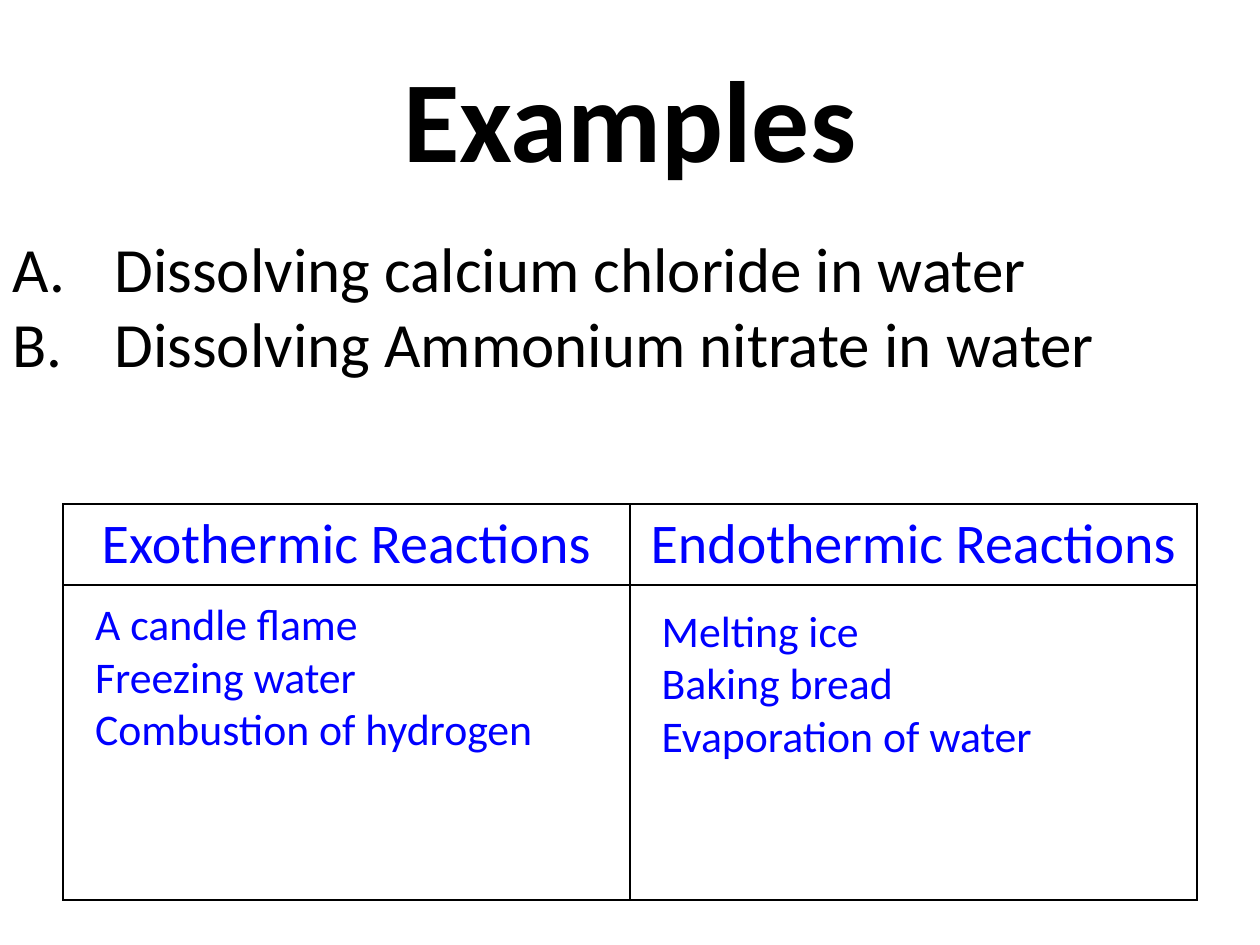
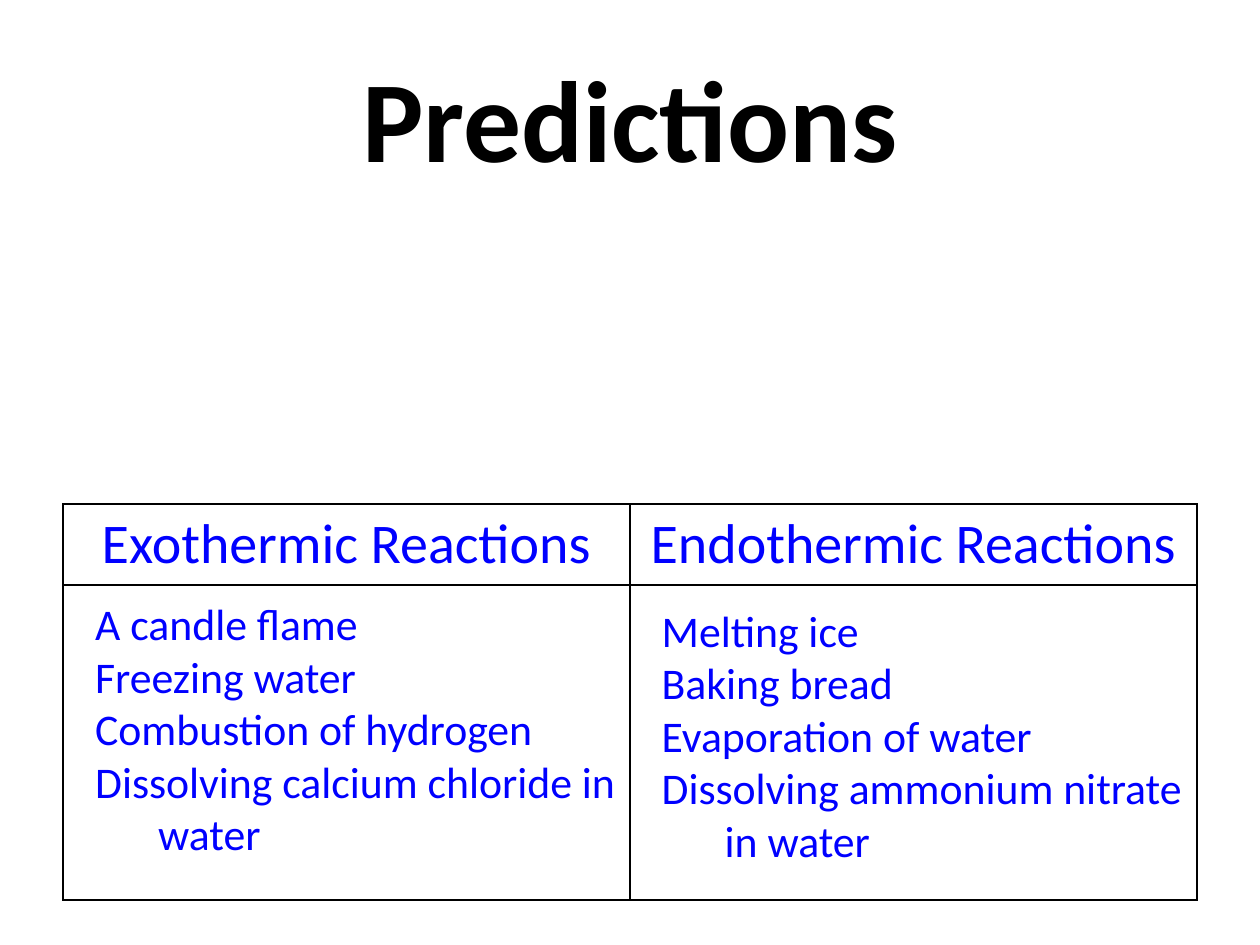
import pptx
import pptx.util
import pptx.dml.color
import pptx.enum.text
import pptx.oxml
import lxml.etree
from pptx.util import Cm

BLACK = pptx.dml.color.RGBColor(0x00, 0x00, 0x00)
BLUE = pptx.dml.color.RGBColor(0x00, 0x00, 0xFF)
FONT = "Calibri"
CENTER = pptx.enum.text.PP_ALIGN.CENTER
NAMESPACE = "http://schemas.openxmlformats.org/drawingml/2006/main"
HEADINGS = ["Exothermic Reactions", "Endothermic Reactions"]
EXOTHERMIC = ["A candle flame", "Freezing water", "Combustion of hydrogen"]
ENDOTHERMIC = ["Melting ice", "Baking bread", "Evaporation of water"]
COLUMN_WIDTH = Cm(11.43)
ROW_HEIGHTS = [Cm(1.63), Cm(6.35)]

SLIDES = [
    {
        "title": "Examples",
        "questions": [
            "Dissolving calcium chloride in water",
            "Dissolving Ammonium nitrate in water",
        ],
        "answers": [EXOTHERMIC, ENDOTHERMIC],
    },
    {
        "title": "Predictions",
        "questions": [],
        "answers": [
            EXOTHERMIC + ["Dissolving calcium chloride in", "\twater"],
            ENDOTHERMIC + ["Dissolving ammonium nitrate", "\tin water"],
        ],
    },
]


def add_text(paragraph, text, size, color, bold=False):
    run = paragraph.add_run()
    run.text = text
    run.font.name = FONT
    run.font.size = pptx.util.Pt(size)
    run.font.bold = bold
    run.font.color.rgb = color


def add_lines(slide, position, lines, size, color, wrap):
    text_box = slide.shapes.add_textbox(*position)
    text_frame = text_box.text_frame
    text_frame.word_wrap = wrap
    for index, line in enumerate(lines):
        paragraph = text_frame.paragraphs[0] if index == 0 else text_frame.add_paragraph()
        add_text(paragraph, line, size, color)
    return text_frame


presentation = pptx.Presentation()
presentation.slide_width = Cm(25.4)
presentation.slide_height = Cm(19.05)

for content in SLIDES:
    slide = presentation.slides.add_slide(presentation.slide_layouts[5])

    title = slide.shapes.title
    title.left, title.top, title.width, title.height = Cm(1.27), Cm(0.76), Cm(22.86), Cm(3.18)
    title.text_frame.auto_size = pptx.enum.text.MSO_AUTO_SIZE.NONE
    title.text_frame.vertical_anchor = pptx.enum.text.MSO_ANCHOR.MIDDLE
    title.text_frame.paragraphs[0].alignment = CENTER
    add_text(title.text_frame.paragraphs[0], content["title"], 66, BLACK, bold=True)

    table = slide.shapes.add_table(
        2, 2, Cm(1.27), Cm(10.16), 2 * COLUMN_WIDTH, sum(ROW_HEIGHTS)
    ).table
    table.first_row = False
    table.horz_banding = False
    for column in table.columns:
        column.width = COLUMN_WIDTH
    for row, height in zip(table.rows, ROW_HEIGHTS):
        row.height = height
    for cell in table.iter_cells():
        properties = cell._tc.get_or_add_tcPr()
        for side in ("lnL", "lnR", "lnT", "lnB"):
            properties.append(pptx.oxml.parse_xml(
                f'<a:{side} xmlns:a="{NAMESPACE}" w="12700"><a:solidFill>'
                f'<a:srgbClr val="{BLACK}"/></a:solidFill></a:{side}>'
            ))
        cell.fill.background()
    for column_index, heading in enumerate(HEADINGS):
        paragraph = table.cell(0, column_index).text_frame.paragraphs[0]
        paragraph.alignment = CENTER
        add_text(paragraph, heading, 32, BLUE)

    answer_corners = [(Cm(1.67), Cm(11.91)), (Cm(13.09), Cm(12.04))]
    for corner, answers in zip(answer_corners, content["answers"]):
        height = Cm(0.25 + 1.07 * len(answers))
        add_lines(slide, (*corner, Cm(11.13), height), answers, 25, BLUE, wrap=False)

    if content["questions"]:
        position = (Cm(0), Cm(4.5), Cm(25.4), Cm(3.33))
        question_frame = add_lines(slide, position, content["questions"], 36, BLACK, wrap=True)
        for paragraph in question_frame.paragraphs:
            properties = paragraph._p.get_or_add_pPr()
            properties.set("marL", str(Cm(2.06)))
            properties.set("indent", str(-Cm(2.06)))
            numbering = lxml.etree.SubElement(properties, f"{{{NAMESPACE}}}buAutoNum")
            numbering.set("type", "alphaUcPeriod")

presentation.save("out.pptx")
